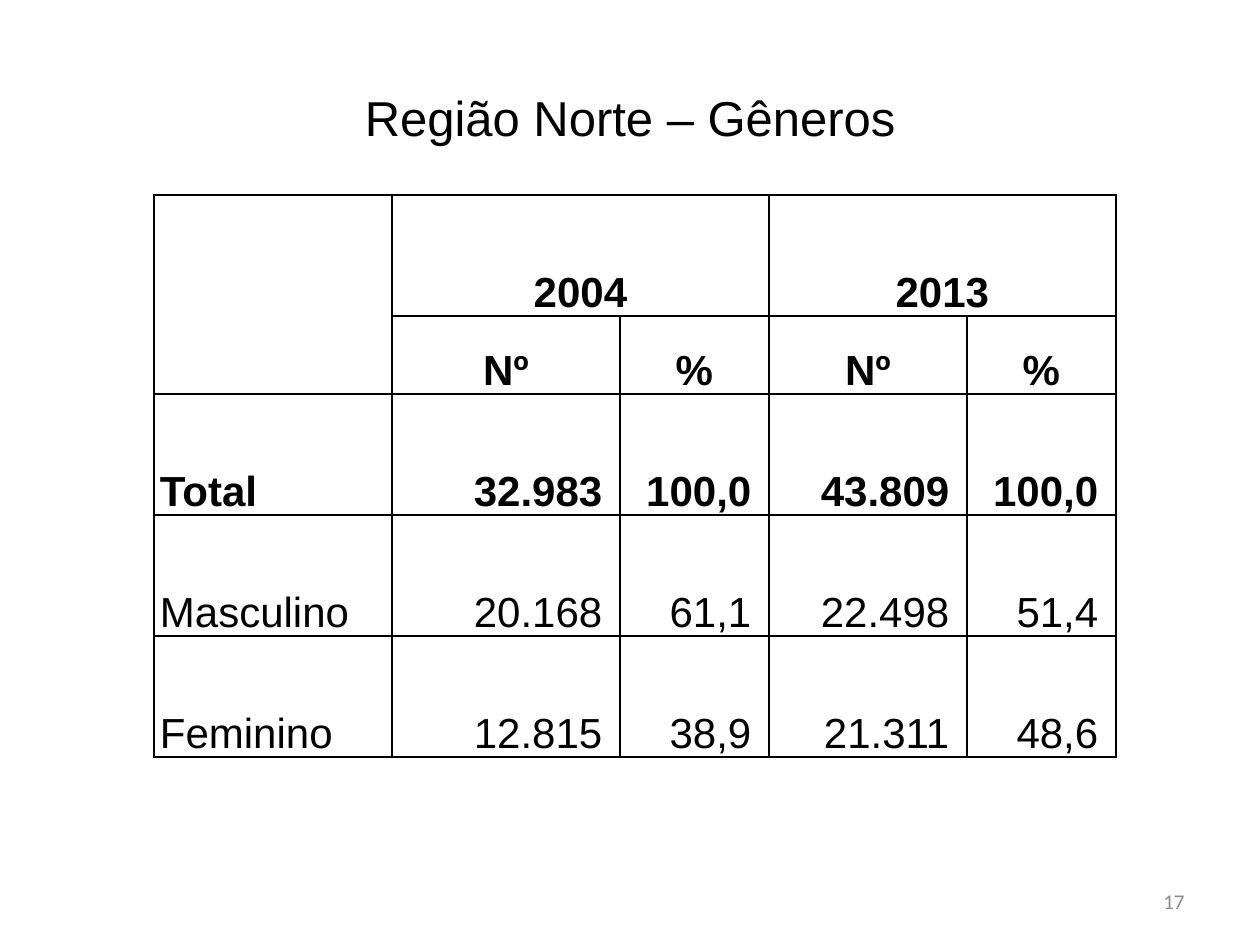
"""Build the slide with the gender table of the Região Norte."""
from lxml.etree import SubElement
from pptx import Presentation
from pptx.dml.color import RGBColor
from pptx.enum.text import MSO_ANCHOR, PP_ALIGN
from pptx.oxml.ns import qn
from pptx.util import Emu, Pt

BLACK = RGBColor(0x00, 0x00, 0x00)
GRAY = RGBColor(0x8C, 0x8C, 0x8C)
SCALE = 914400 / 126


def px(n):
    return Emu(round(n * SCALE))


def write(tf, text, align, size, name, color, bold=False):
    p = tf.paragraphs[0]
    p.alignment = align
    r = p.add_run()
    r.text = text
    r.font.color.rgb = color
    for key, value in {"size": Pt(size), "name": name, "bold": bold}.items():
        setattr(r.font, key, value)
    return p


prs = Presentation()
prs.slide_width, prs.slide_height = px(1260), px(945)
s = prs.slides.add_slide(prs.slide_layouts[5])

title = s.shapes.title
title.left, title.top, title.width, title.height = map(px, (63, 38, 1134, 157))
title.text_frame.vertical_anchor = MSO_ANCHOR.MIDDLE
write(title.text_frame, "Região Norte – Gêneros", PP_ALIGN.CENTER, 28, "Arial", BLACK)

rows = [
    ["", "2004", "", "2013", ""],
    ["", "Nº", "%", "Nº", "%"],
    ["Total", "32.983 ", "100,0 ", "43.809 ", "100,0 "],
    ["Masculino", "20.168 ", "61,1 ", "22.498 ", "51,4 "],
    ["Feminino", "12.815 ", "38,9 ", "21.311 ", "48,6 "],
]
col_widths = [238, 228, 149, 198, 149]
row_heights = [121, 78, 121, 121, 121]
frame = s.shapes.add_table(5, 5, px(154), px(195), px(sum(col_widths)), px(sum(row_heights)))
table = frame.table
table.first_row = table.horz_banding = False
for col, width in zip(table.columns, col_widths):
    col.width = px(width)
for row, height in zip(table.rows, row_heights):
    row.height = px(height)

cell_format = {
    "vertical_anchor": MSO_ANCHOR.BOTTOM,
    "margin_left": px(6), "margin_right": px(6),
    "margin_top": 0, "margin_bottom": 0,
}
for i, texts in enumerate(rows):
    for j, text in enumerate(texts):
        cell = table.cell(i, j)
        for key, value in cell_format.items():
            setattr(cell, key, value)
        tcPr = cell._tc.get_or_add_tcPr()
        for side in ("a:lnL", "a:lnR", "a:lnT", "a:lnB"):
            ln = SubElement(tcPr, qn(side), w=str(Pt(1)))
            fill = SubElement(ln, qn("a:solidFill"))
            SubElement(fill, qn("a:srgbClr"), val=str(BLACK))
        cell.fill.background()
        if text:
            align = PP_ALIGN.CENTER if i < 2 else PP_ALIGN.RIGHT if j else PP_ALIGN.LEFT
            p = write(cell.text_frame, text, align, 24, "Arial", BLACK, i < 3)
            p.line_spacing = 1.07

for first, last in [((0, 0), (1, 0)), ((0, 1), (0, 2)), ((0, 3), (0, 4))]:
    table.cell(*first).merge(table.cell(*last))

number = s.shapes.add_textbox(px(903), px(876), px(294), px(50))
tf = number.text_frame
tf.word_wrap = True
tf.vertical_anchor = MSO_ANCHOR.MIDDLE
write(tf, "17", PP_ALIGN.RIGHT, 12, "Calibri", GRAY)

prs.save("out.pptx")
